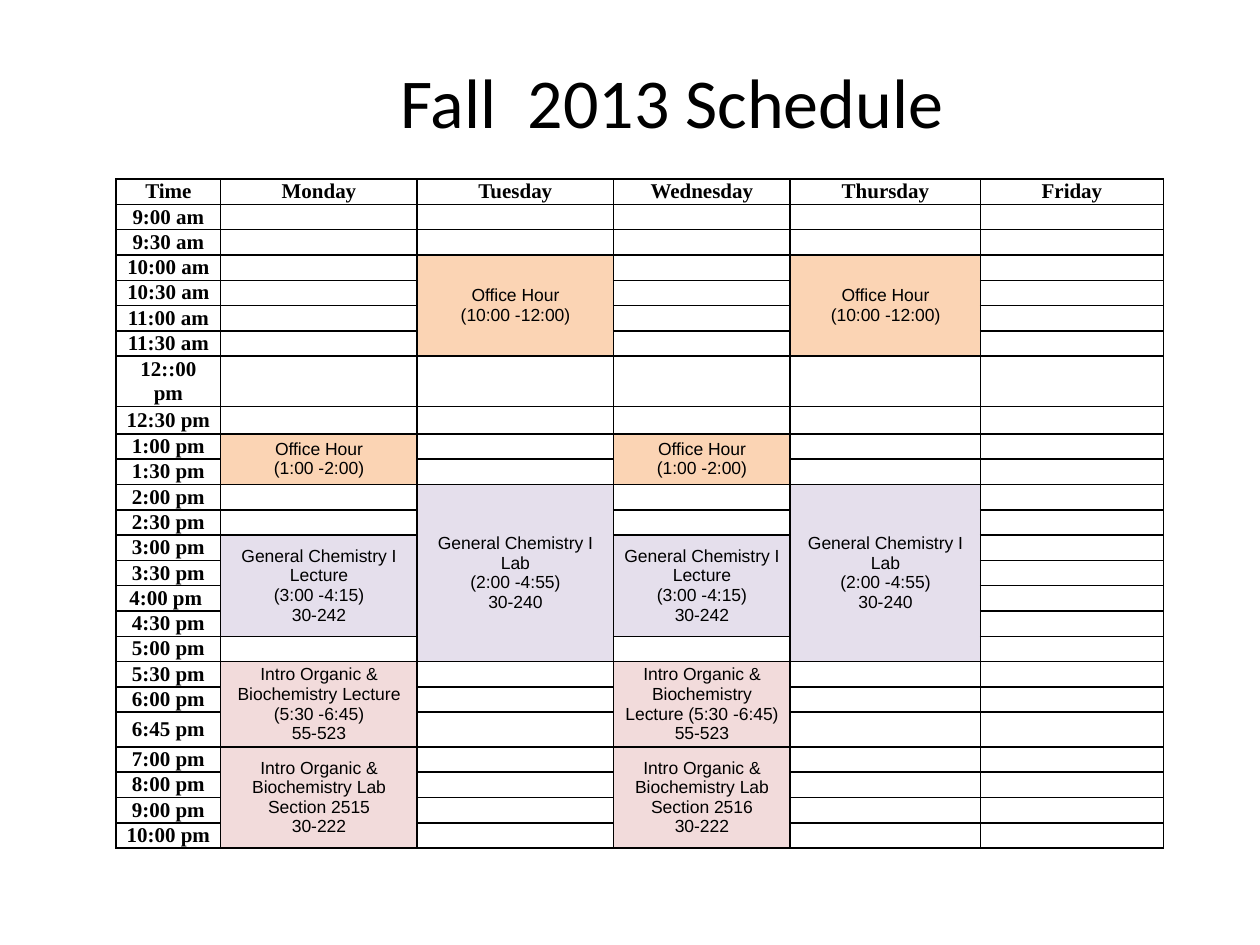
from lxml.etree import SubElement as Sub
from pptx import Presentation
from pptx.dml.color import RGBColor as RGB
from pptx.enum.text import MSO_ANCHOR as Anchor, MSO_AUTO_SIZE as Fit, PP_ALIGN as Align
from pptx.oxml.ns import qn
from pptx.util import Cm, Pt

HUES = {"ink": "000000", "office": "FBD4B4", "chem": "E5DFEC", "organic": "F2DBDB"}
DAYS = ["Monday", "Tuesday", "Wednesday", "Thursday", "Friday"]
TIMES = ["9:00 am", "9:30 am", "10:00 am", "10:30 am", "11:00 am", "11:30 am",
         "12::00 pm", "12:30 pm", "1:00 pm", "1:30 pm", "2:00 pm", "2:30 pm",
         "3:00 pm", "3:30 pm", "4:00 pm ", "4:30 pm", "5:00 pm", "5:30 pm",
         "6:00 pm", "6:45 pm", "7:00 pm", "8:00 pm", "9:00 pm", "10:00 pm"]
WIDTHS = [2.11, 3.96, 3.96, 3.56, 3.84, 3.68]
ROW = 0.51
TALL = {"12::00 pm": 1.01, "12:30 pm": 0.55, "6:45 pm": 0.7}

OFFICE = "Office Hour"
CHEM = "General Chemistry I"
ORGANIC = "Intro Organic & Biochemistry"
# days, first time, rows covered, colour, lines
EVENTS = [
    (["Tuesday", "Thursday"], "10:00 am", 4, "office", [OFFICE, "(10:00 -12:00)"]),
    (["Monday", "Wednesday"], "1:00 pm", 2, "office", [OFFICE, "(1:00 -2:00)"]),
    (["Tuesday", "Thursday"], "2:00 pm", 7, "chem",
     [CHEM, "Lab", "(2:00 -4:55)", "30-240"]),
    (["Monday", "Wednesday"], "3:00 pm", 4, "chem",
     [CHEM, "Lecture", "(3:00 -4:15)", "30-242"]),
    (["Monday", "Wednesday"], "5:30 pm", 3, "organic",
     [f"{ORGANIC} Lecture (5:30 -6:45)", "55-523"]),
    (["Monday"], "7:00 pm", 4, "organic", [f"{ORGANIC} Lab", "Section 2515", "30-222"]),
    (["Wednesday"], "7:00 pm", 4, "organic", [f"{ORGANIC} Lab", "Section 2516", "30-222"]),
]


class Deck:
    def __init__(self):
        self.prs = Presentation()
        self.prs.slide_width, self.prs.slide_height = Cm(25.4), Cm(19.05)
        self.slide = self.prs.slides.add_slide(self.prs.slide_layouts[5])

    def add_run(self, para, text, size, face, bold=False):
        run = para.add_run()
        run.text = text
        font = run.font
        font.size, font.name, font.bold = Pt(size), face, bold
        font.color.rgb = RGB.from_string(HUES["ink"])

    def title(self, text, x, y, w, h):
        box = self.slide.shapes.title
        box.left, box.top, box.width, box.height = Cm(x), Cm(y), Cm(w), Cm(h)
        frame = box.text_frame
        frame.word_wrap = False
        frame.auto_size = Fit.SHAPE_TO_FIT_TEXT
        para = frame.paragraphs[0]
        para.alignment = Align.LEFT
        self.add_run(para, text, 40, "Calibri")

    def table(self, x, y, widths, heights):
        """Add an empty grid with thin borders and no style bands."""
        frame = self.slide.shapes.add_table(len(heights), len(widths), Cm(x), Cm(y),
                                            Cm(sum(widths)), Cm(sum(heights)))
        grid = frame.table
        grid.first_row = grid.horz_banding = False
        for col, width in zip(grid.columns, widths):
            col.width = Cm(width)
        for row, height in zip(grid.rows, heights):
            row.height = Cm(height)
        for cell in grid.iter_cells():
            self.blank(cell)
        return grid

    def blank(self, cell):
        """Set the margins, borders and empty-line size of a cell."""
        cell.margin_left = cell.margin_right = Cm(0.16)
        cell.margin_top = cell.margin_bottom = 0
        cell.vertical_anchor = Anchor.MIDDLE
        props = cell._tc.get_or_add_tcPr()
        for side in ("lnL", "lnR", "lnT", "lnB"):
            line = Sub(props, qn(f"a:{side}"), w=str(Pt(1)))
            fill = Sub(line, qn("a:solidFill"))
            Sub(fill, qn("a:srgbClr"), val=HUES["ink"])
        cell.fill.background()
        Sub(cell.text_frame.paragraphs[0]._p, qn("a:endParaRPr"), sz="1000")

    def label(self, cell, lines, size, face, bold=False):
        frame = cell.text_frame
        for i, text in enumerate(lines):
            para = frame.add_paragraph() if i else frame.paragraphs[0]
            para.alignment = Align.CENTER
            self.add_run(para, text, size, face, bold)

    def event(self, grid, row, col, span, hue, lines):
        cell = grid.cell(row, col)
        cell.merge(grid.cell(row + span - 1, col))
        cell.fill.solid()
        cell.fill.fore_color.rgb = RGB.from_string(HUES[hue])
        self.label(cell, lines, 10, "Arial")


def main():
    deck = Deck()
    deck.title("Fall  2013 Schedule", 7.82, 1.04, 11.56, 1.96)
    heights = [ROW] + [TALL.get(time, ROW) for time in TIMES]
    grid = deck.table(2.34, 3.61, WIDTHS, heights)
    heads = [(0, col, day) for col, day in enumerate(["Time"] + DAYS)]
    heads += [(row, 0, time) for row, time in enumerate(TIMES, 1)]
    for row, col, text in heads:
        deck.label(grid.cell(row, col), [text], 12, "Times New Roman", True)
    for days, time, span, hue, lines in EVENTS:
        for day in days:
            deck.event(grid, TIMES.index(time) + 1, DAYS.index(day) + 1, span, hue, lines)
    deck.prs.save("out.pptx")


if __name__ == "__main__":
    main()
